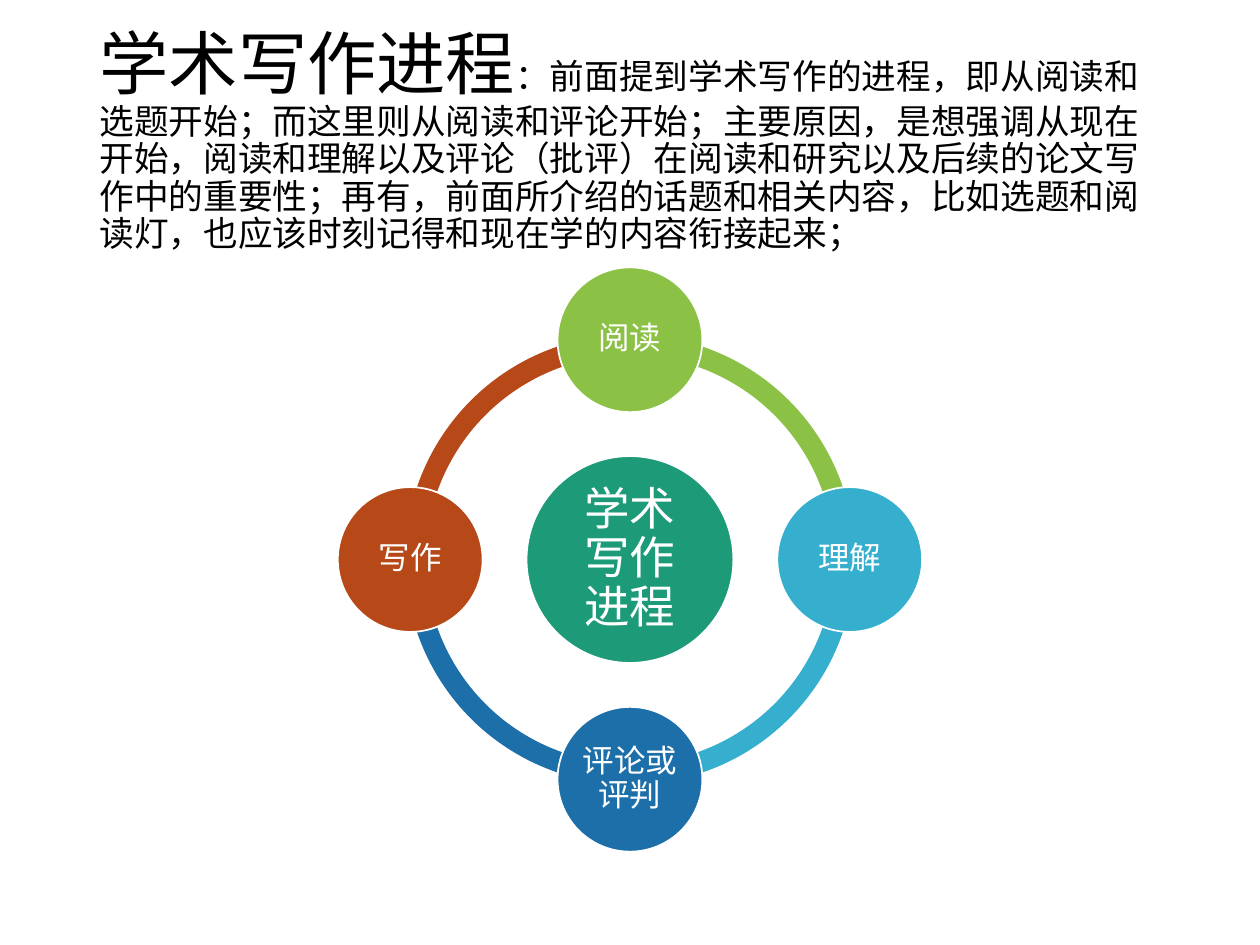
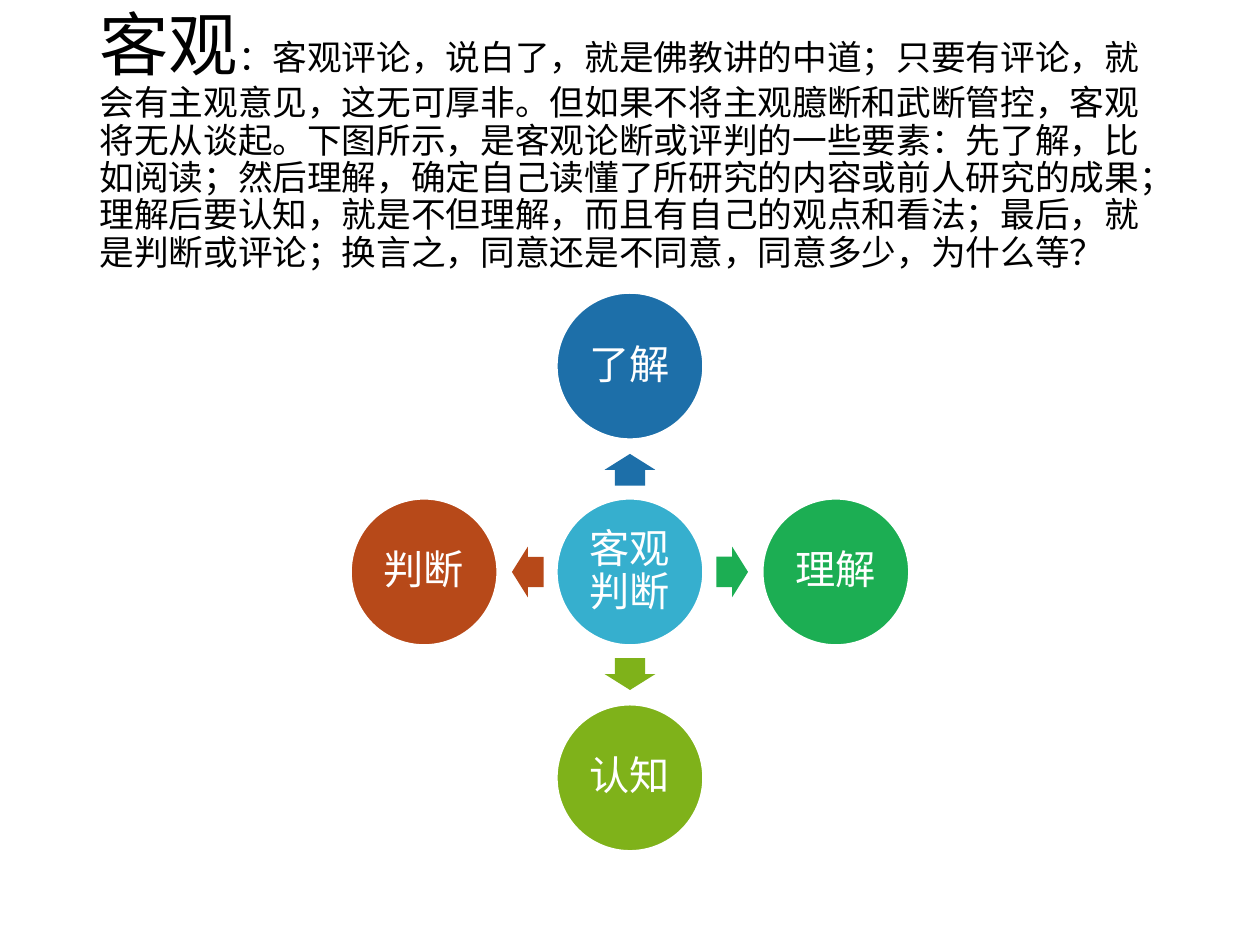
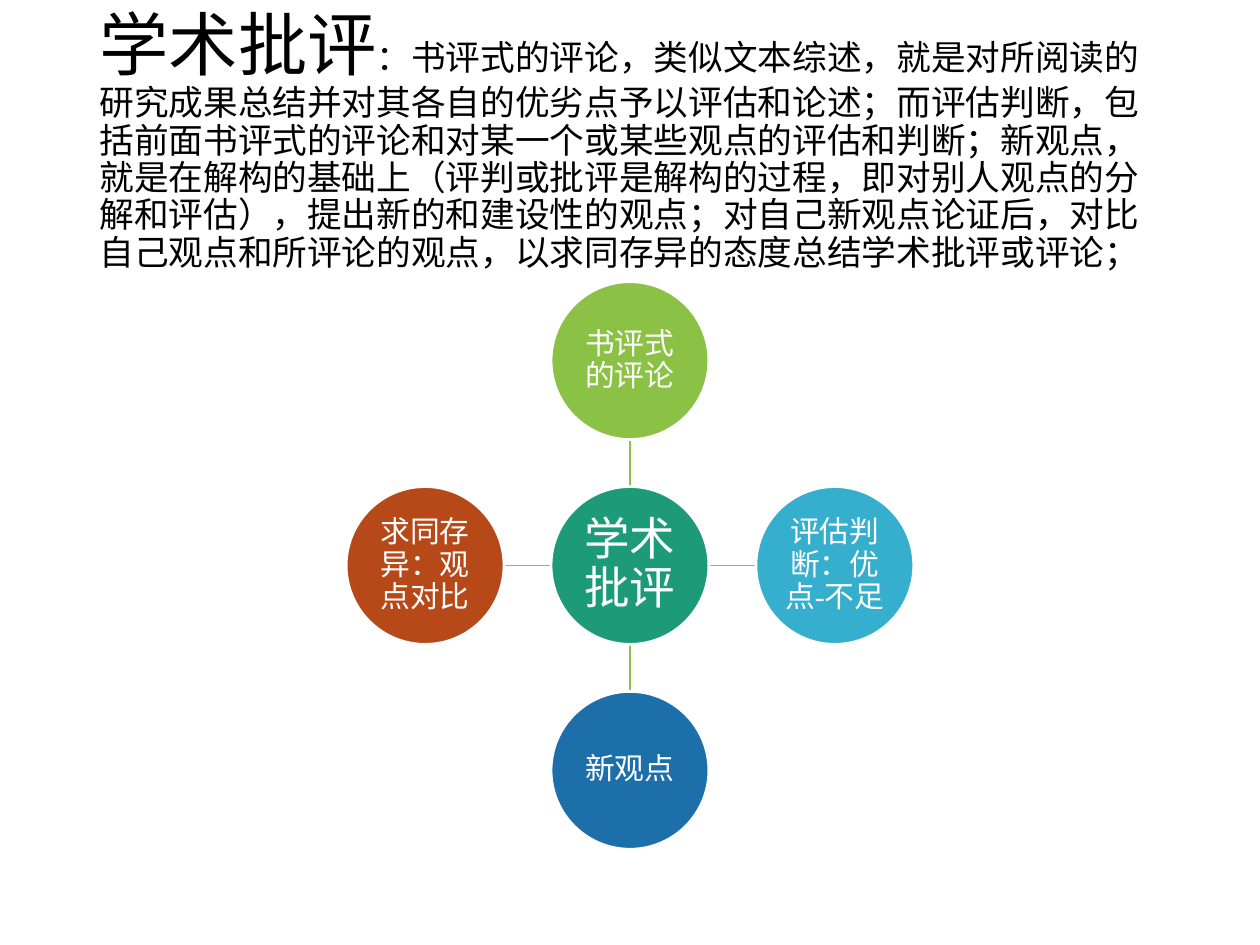
"""Build three slides on academic writing, each a lead text above a hub-and-spoke diagram."""
from lxml import etree
from pptx import Presentation
from pptx import util as u
from pptx.dml.color import RGBColor
from pptx.enum import lang, shapes, text
from pptx.oxml.ns import qn

WHITE = RGBColor(0xFF, 0xFF, 0xFF)
BLACK = RGBColor(0x00, 0x00, 0x00)
TEAL = RGBColor(0x1D, 0x9A, 0x78)
LIME = RGBColor(0x8B, 0xC1, 0x45)
CYAN = RGBColor(0x36, 0xAF, 0xCE)
BLUE = RGBColor(0x1D, 0x6F, 0xA9)
RUST = RGBColor(0xB7, 0x49, 0x19)
GREEN = RGBColor(0x1C, 0xAE, 0x53)
OLIVE = RGBColor(0x7F, 0xB2, 0x1A)

FONT = "Times New Roman"
CENTER_X = 12.7
DIRECTIONS = [(0, -1), (1, 0), (0, 1), (-1, 0)]

SLIDES = [
    dict(
        heading="学术写作进程",
        lead="：前面提到学术写作的进程，即从阅读和选题开始；而这里则从阅读和评论开始；主要原因，是想强调从现在开始，阅读和理解以及评论（批评）在阅读和研究以及后续的论文写作中的重要性；再有，前面所介绍的话题和相关内容，比如选题和阅读灯，也应该时刻记得和现在学的内容衔接起来；",
        link="arc", center_y=11.28, orbit=4.43, outline=1,
        hub=("学术写作进程", TEAL, 4.17, 26, 0.1), node_style=(2.92, 18, 0.08),
        nodes=[("阅读", LIME), ("理解", CYAN), ("评论或评判", BLUE), ("写作", RUST)],
    ),
    dict(
        heading="客观",
        lead="：客观评论，说白了，就是佛教讲的中道；只要有评论，就会有主观意见，这无可厚非。但如果不将主观臆断和武断管控，客观将无从谈起。下图所示，是客观论断或评判的一些要素：先了解，比如阅读；然后理解，确定自己读懂了所研究的内容或前人研究的成果；理解后要认知，就是不但理解，而且有自己的观点和看法；最后，就是判断或评论；换言之，同意还是不同意，同意多少，为什么等？",
        link="arrow", center_y=11.53, orbit=4.15, outline=1,
        hub=("客观判断", CYAN, 2.95, 23, 0.08), node_style=(2.95, 23, 0.08),
        nodes=[("了解", BLUE), ("理解", GREEN), ("认知", OLIVE), ("判断", RUST)],
    ),
    dict(
        heading="学术批评",
        lead="：书评式的评论，类似文本综述，就是对所阅读的研究成果总结并对其各自的优劣点予以评估和论述；而评估判断，包括前面书评式的评论和对某一个或某些观点的评估和判断；新观点，就是在解构的基础上（评判或批评是解构的过程，即对别人观点的分解和评估），提出新的和建设性的观点；对自己新观点论证后，对比自己观点和所评论的观点，以求同存异的态度总结学术批评或评论；",
        link="line", center_y=11.4, orbit=4.13, outline=1.5,
        hub=("学术批评", TEAL, 3.18, 26, 0.05), node_style=(3.18, 17, 0.03),
        nodes=[("书评式的评论", LIME), ("评估判断：优点-不足", CYAN), ("新观点", BLUE), ("求同存异：观点对比", RUST)],
    ),
]


def format_run(run, size, color):
    run.font.name = FONT
    run.font.size = u.Pt(size)
    run.font.color.rgb = color
    run.font.language_id = lang.MSO_LANGUAGE_ID.SIMPLIFIED_CHINESE


def add_centered(slide, kind, x, y, width, height, color):
    shape = slide.shapes.add_shape(
        kind, u.Cm(x - width / 2), u.Cm(y - height / 2), u.Cm(width), u.Cm(height))
    shape.shadow.inherit = False
    shape.fill.solid()
    shape.fill.fore_color.rgb = color
    shape.line.fill.background()
    return shape


presentation = Presentation()
presentation.slide_width = u.Cm(25.4)
presentation.slide_height = u.Cm(19.05)

for content in SLIDES:
    slide = presentation.slides.add_slide(presentation.slide_layouts[5])
    title = slide.shapes.title
    title.left, title.top, title.width, title.height = u.Cm(1.75), u.Cm(1.02), u.Cm(21.9), u.Cm(3.68)
    title.text_frame.auto_size = text.MSO_AUTO_SIZE.NONE
    title.text_frame.vertical_anchor = text.MSO_ANCHOR.MIDDLE
    paragraph = title.text_frame.paragraphs[0]
    paragraph.alignment = text.PP_ALIGN.LEFT
    paragraph.line_spacing = 0.9
    for words, size in [(content["heading"], 39.6), (content["lead"], 19.8)]:
        run = paragraph.add_run()
        run.text = words
        format_run(run, size, BLACK)

    center_y, orbit = content["center_y"], content["orbit"]
    hub_radius = content["hub"][2] / 2
    node_radius = content["node_style"][0] / 2
    circles = [(CENTER_X, center_y, *content["hub"])]
    for index, ((dx, dy), (label, color)) in enumerate(zip(DIRECTIONS, content["nodes"])):
        circles.append((CENTER_X + dx * orbit, center_y + dy * orbit, label, color, *content["node_style"]))
        if content["link"] == "arc":
            arc = add_centered(slide, shapes.MSO_SHAPE.BLOCK_ARC, CENTER_X, center_y, 9.07, 9.07, color)
            arc.adjustments[0] = (162 + 54 * index) % 216
            arc.adjustments[1] = 54 * index
            arc.adjustments[2] = 0.046
        elif content["link"] == "arrow":
            arrow = add_centered(slide, shapes.MSO_SHAPE.RIGHT_ARROW,
                                 CENTER_X + dx * 2.06, center_y + dy * 2.06, 0.64, 1.02, color)
            arrow.adjustments[0] = 0.6
            arrow.rotation = (270 + 90 * index) % 360
        else:
            reach = orbit - node_radius
            line = slide.shapes.add_connector(
                shapes.MSO_CONNECTOR.STRAIGHT,
                u.Cm(CENTER_X + dx * hub_radius), u.Cm(center_y + dy * hub_radius),
                u.Cm(CENTER_X + dx * reach), u.Cm(center_y + dy * reach))
            line.line.color.rgb = LIME
            line.line.width = u.Pt(1)
            etree.SubElement(line._element.spPr, qn("a:effectLst"))

    for x, y, label, color, diameter, size, inset in circles:
        circle = add_centered(slide, shapes.MSO_SHAPE.OVAL, x, y, diameter, diameter, color)
        circle.line.color.rgb = WHITE
        circle.line.width = u.Pt(content["outline"])
        frame = circle.text_frame
        frame.text = label
        frame.word_wrap = True
        frame.vertical_anchor = text.MSO_ANCHOR.MIDDLE
        frame.margin_left = frame.margin_right = frame.margin_top = frame.margin_bottom = u.Cm(inset)
        paragraph = frame.paragraphs[0]
        paragraph.alignment = text.PP_ALIGN.CENTER
        paragraph.line_spacing = 0.9
        format_run(paragraph.runs[0], size, WHITE)

presentation.save("out.pptx")
